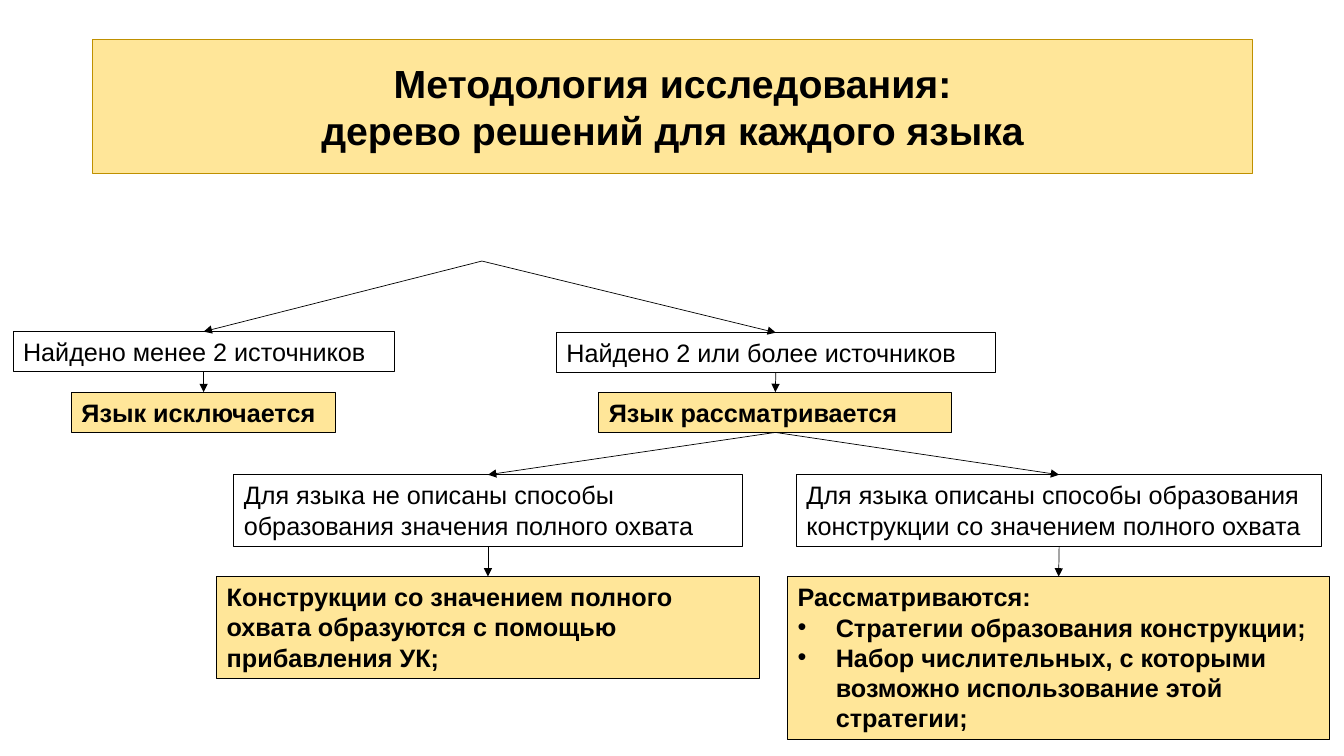
"""Build a slide with a decision tree of the research methodology."""
from lxml import etree
from pptx import Presentation
from pptx.dml.color import RGBColor
from pptx.enum.dml import MSO_THEME_COLOR
from pptx.enum.shapes import MSO_CONNECTOR, MSO_SHAPE
from pptx.enum.text import MSO_ANCHOR, MSO_AUTO_SIZE, PP_ALIGN
from pptx.oxml.ns import qn
from pptx.util import Inches, Pt

RECTANGLE = MSO_SHAPE.RECTANGLE
STRAIGHT = MSO_CONNECTOR.STRAIGHT
TOP, BOTTOM = 0, 2
COLOURS = {"highlight": "FFE699", "title line": "BF9000", "plain": "FFFFFF", "ink": "000000"}
FONT = "Arial"


def format_box(shape, text, fill="plain", line="ink", width=0.75, size=18, bold=False,
               align=PP_ALIGN.LEFT, anchor=MSO_ANCHOR.TOP, bulleted=False):
    """Fill and outline a box and write its paragraphs, bulleting all but the first on request."""
    shape.fill.solid()
    shape.fill.fore_color.rgb = RGBColor.from_string(COLOURS[fill])
    shape.line.color.rgb = RGBColor.from_string(COLOURS[line])
    shape.line.width = Pt(width)
    frame = shape.text_frame
    frame.text = text
    frame.word_wrap = True
    frame.auto_size = MSO_AUTO_SIZE.NONE
    frame.vertical_anchor = anchor
    for index, paragraph in enumerate(frame.paragraphs):
        paragraph.alignment = align
        paragraph.space_before = Pt(0)
        paragraph.font.name = FONT
        paragraph.font.size = Pt(size)
        paragraph.font.bold = bold
        paragraph.font.color.rgb = RGBColor.from_string(COLOURS["ink"])
        for run in paragraph.runs:
            run.font.name = FONT
            run.font.size = Pt(size)
            run.font.bold = bold
            run.font.color.rgb = RGBColor.from_string(COLOURS["ink"])
        if bulleted:
            indent = Inches(0.38) if index else 0
            properties = paragraph._p.get_or_add_pPr()
            properties.set("marL", str(indent))
            properties.set("indent", str(-indent))
            bullet = etree.Element(qn("a:buChar"), char="•") if index else etree.Element(qn("a:buNone"))
            properties.find(qn("a:spcBef")).addnext(bullet)


def place(shape, left, top, width, height):
    """Move and size a placeholder in inches."""
    shape.left, shape.top = Inches(left), Inches(top)
    shape.width, shape.height = Inches(width), Inches(height)


presentation = Presentation()
presentation.slide_width = Inches(13.33)
presentation.slide_height = Inches(7.5)
slide = presentation.slides.add_slide(presentation.slide_layouts[1])

title = slide.shapes.title
place(title, 0.92, 0.39, 11.5, 1.33)
etree.SubElement(title._element.spPr, qn("a:prstGeom"), prst="roundRect")
format_box(title, "Методология исследования:\nдерево решений для каждого языка", fill="highlight",
           line="title line", width=1, size=28, bold=True, align=PP_ALIGN.CENTER,
           anchor=MSO_ANCHOR.MIDDLE)

considered_list = slide.placeholders[1]
place(considered_list, 7.81, 5.72, 5.38, 1.62)
format_box(considered_list, "Рассматриваются:\nСтратегии образования конструкции;\n"
           "Набор числительных, с которыми возможно использование этой стратегии;",
           fill="highlight", bold=True, bulleted=True)

conditions = {
    "few sources": ("Найдено менее 2 источников", 0.13, 3.29, 3.78, 0.4),
    "enough sources": ("Найдено 2 или более источников", 5.52, 3.3, 4.35, 0.4),
    "not described": ("Для языка не описаны способы образования значения полного охвата",
                      2.32, 4.71, 5.04, 0.71),
    "described": ("Для языка описаны способы образования конструкции со значением полного охвата",
                  7.9, 4.71, 5.21, 0.71),
}
outcomes = {
    "excluded": ("Язык исключается", 0.71, 3.89, 2.62, 0.4),
    "included": ("Язык рассматривается", 5.94, 3.89, 3.5, 0.4),
    "marker added": ("Конструкции со значением полного охвата образуются с помощью прибавления УК;",
                     2.15, 5.72, 5.38, 1.01),
}
boxes = {"considered": considered_list}
for group, fill, bold in ((conditions, "plain", False), (outcomes, "highlight", True)):
    for name, (text, *bounds) in group.items():
        box = slide.shapes.add_shape(RECTANGLE, *map(Inches, bounds))
        box.shadow.inherit = False
        format_box(box, text, fill=fill, bold=bold)
        boxes[name] = box

branches = [
    (None, "few sources"),
    (None, "enough sources"),
    ("few sources", "excluded"),
    ("enough sources", "included"),
    ("included", "not described"),
    ("included", "described"),
    ("not described", "marker added"),
    ("described", "considered"),
]
root = Inches(4.78), Inches(2.59)
for source, target in branches:
    arrow = slide.shapes.add_connector(STRAIGHT, *root, *root)
    if source:
        arrow.begin_connect(boxes[source], BOTTOM)
    arrow.end_connect(boxes[target], TOP)
    arrow.line.color.rgb = RGBColor.from_string(COLOURS["ink"])
    arrow.line.width = Pt(0.5)
    etree.SubElement(arrow.line._get_or_add_ln(), qn("a:tailEnd"), type="triangle")
    etree.SubElement(arrow._element.spPr, qn("a:effectLst"))

presentation.save("out.pptx")
